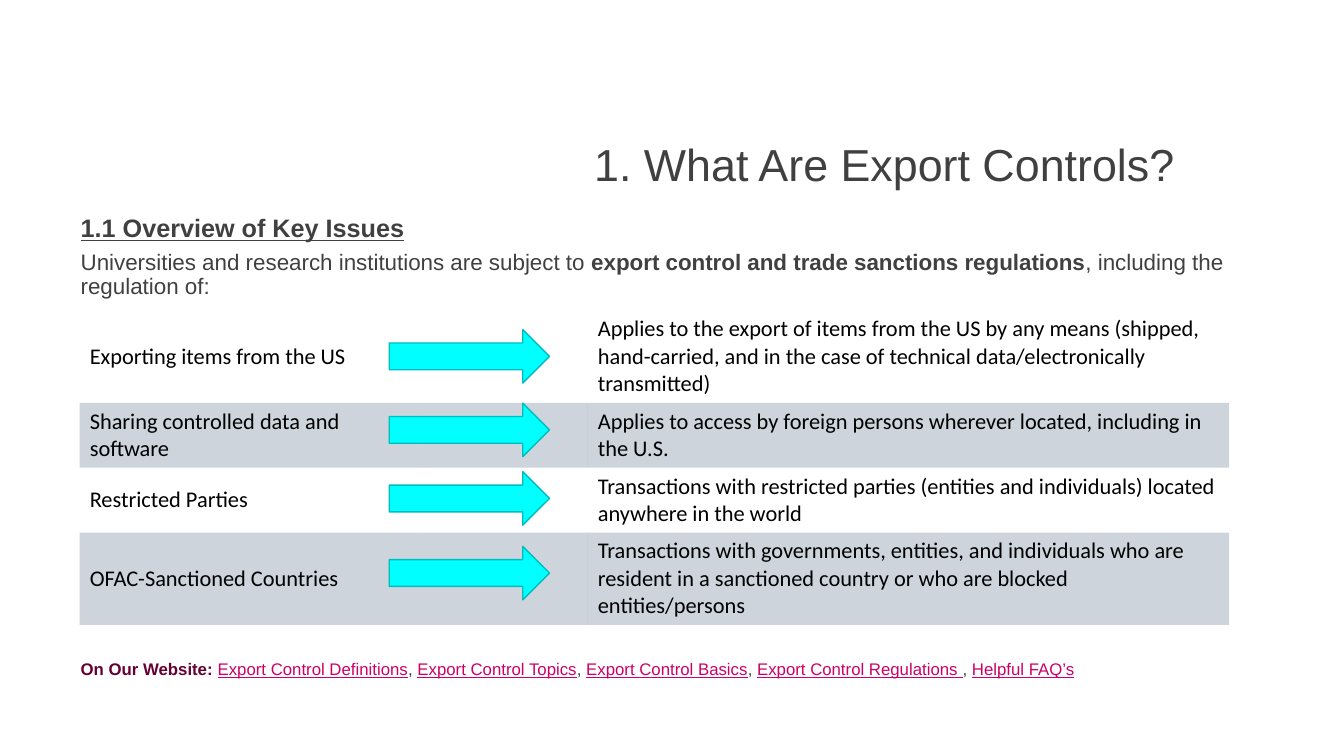
import pptx
import pptx.dml.color
import pptx.enum.shapes
import pptx.enum.text
import pptx.oxml
import pptx.oxml.ns
import pptx.util
from lxml import etree

RGBColor = pptx.dml.color.RGBColor
TEXT_GREY = RGBColor(0x40, 0x40, 0x40)
BLACK = RGBColor(0x00, 0x00, 0x00)
BAND_NAVY = RGBColor(0x05, 0x29, 0x50)
ARROW_CYAN = RGBColor(0x00, 0xFF, 0xFF)
ARROW_EDGE = RGBColor(0x00, 0xBD, 0xBD)
MAROON = RGBColor(0x66, 0x00, 0x33)
LINK_PINK = RGBColor(0xCC, 0x00, 0x66)
NO_STYLE_TABLE = "{2D5ABB26-0587-4C30-8999-92F81FD0307C}"

presentation = pptx.Presentation()
presentation.slide_width = pptx.util.Inches(13.33)
presentation.slide_height = pptx.util.Inches(7.5)
# One column is 1% of the slide's width, one row is 1% of its height
COLUMN = presentation.slide_width / 100
ROW = presentation.slide_height / 100
slide = presentation.slides.add_slide(presentation.slide_layouts[1])


def place(shape, left, top, width, height):
    shape.left, shape.width = int(left * COLUMN), int(width * COLUMN)
    shape.top, shape.height = int(top * ROW), int(height * ROW)
    shape.text_frame.auto_size = pptx.enum.text.MSO_AUTO_SIZE.NONE


def add_run(paragraph, text, color=TEXT_GREY, bold=False, underline=False):
    run = paragraph.add_run()
    run.text = text
    run.font.color.rgb = color
    run.font.bold = bold
    run.font.underline = underline


# Title
title = slide.shapes.title
place(title, 32.48, 18.4, 66.69, 7.47)
title.text_frame.text = "1. What Are Export Controls?"
title.text_frame.vertical_anchor = pptx.enum.text.MSO_ANCHOR.MIDDLE
paragraph = title.text_frame.paragraphs[0]
paragraph.alignment = pptx.enum.text.PP_ALIGN.CENTER
paragraph.line_spacing = 0.9
paragraph.font.name = "Arial"
paragraph.font.size = pptx.util.Pt(32)
paragraph.font.color.rgb = TEXT_GREY

# Body: heading, introduction, and the website line below the table
body = slide.placeholders[1]
place(body, 5.25, 27.87, 89.5, 67.33)
heading = body.text_frame.paragraphs[0]
introduction = body.text_frame.add_paragraph()
website = body.text_frame.add_paragraph()
for paragraph, size, before, after in [
    (heading, 18, 0, 6), (introduction, 16, 0, 0), (website, 12, 258, 0)
]:
    properties = paragraph._p.get_or_add_pPr()
    properties.set("marL", "0")
    properties.set("indent", "0")
    etree.SubElement(properties, pptx.oxml.ns.qn("a:buNone"))
    paragraph.line_spacing = 0.9
    paragraph.space_before = pptx.util.Pt(before)
    paragraph.space_after = pptx.util.Pt(after)
    paragraph.font.name = "Arial"
    paragraph.font.size = pptx.util.Pt(size)

add_run(heading, "1.1 Overview of Key Issues", bold=True, underline=True)
add_run(introduction, "Universities and research institutions are subject to ")
add_run(introduction, "export control and trade sanctions regulations", bold=True)
add_run(introduction, ", including the regulation of:")
add_run(website, "On Our Website: ", MAROON, bold=True)
topics = ["Export Control Definitions", "Export Control Topics", "Export Control Basics",
          "Export Control Regulations ", "Helpful FAQ’s"]
for index, topic in enumerate(topics):
    if index:
        add_run(website, ", ")
    add_run(website, topic, LINK_PINK, underline=True)

# Table: subject, room for the arrow, explanation; row height, arrow top
rules = [
    ("Exporting items from the US",
     "Applies to the export of items from the US by any means (shipped, hand-carried, "
     "and in the case of technical data/electronically transmitted)", 12.19, 43.6),
    ("Sharing controlled data and software",
     "Applies to access by foreign persons wherever located, including in the U.S.",
     8.57, 53.33),
    ("Restricted Parties",
     "Transactions with restricted parties (entities and individuals) located "
     "anywhere in the world", 8.57, 62.4),
    ("OFAC-Sanctioned Countries",
     "Transactions with governments, entities, and individuals who are resident in a "
     "sanctioned country or who are blocked entities/persons", 12.19, 72.27),
]
table_frame = slide.shapes.add_table(
    len(rules), 3, int(5.93 * COLUMN), int(41.07 * ROW), int(85.52 * COLUMN), int(41.52 * ROW))
table = table_frame.table
table.first_row = False
table.horz_banding = False
table._tbl.tblPr.find(pptx.oxml.ns.qn("a:tableStyleId")).text = NO_STYLE_TABLE
for column, width in zip(table.columns, [25.06, 12.75, 47.71]):
    column.width = int(width * COLUMN)

for index, (subject, explanation, height, arrow_top) in enumerate(rules):
    table.rows[index].height = int(height * ROW)
    for cell, text in zip(table.rows[index].cells, [subject, "", explanation]):
        cell.text = text
        font = cell.text_frame.paragraphs[0].font
        font.name = "Calibri"
        font.size = pptx.util.Pt(16)
        font.color.rgb = BLACK
        if text == subject:
            cell.vertical_anchor = pptx.enum.text.MSO_ANCHOR.MIDDLE
        if index % 2:
            cell.fill.solid()
            cell.fill.fore_color.rgb = BAND_NAVY
            color = cell._tc.tcPr.find(".//" + pptx.oxml.ns.qn("a:srgbClr"))
            etree.SubElement(color, pptx.oxml.ns.qn("a:alpha"), val="20000")
        else:
            cell.fill.background()

    # Arrow from subject to explanation
    arrow = slide.shapes.add_shape(pptx.enum.shapes.MSO_SHAPE.RIGHT_ARROW, 0, 0, 0, 0)
    place(arrow, 28.96, arrow_top, 11.93, 7.07)
    arrow.shadow.inherit = False
    arrow.fill.solid()
    arrow.fill.fore_color.rgb = ARROW_CYAN
    arrow.line.color.rgb = ARROW_EDGE
    arrow.line.width = pptx.util.Pt(1)

presentation.save("out.pptx")
